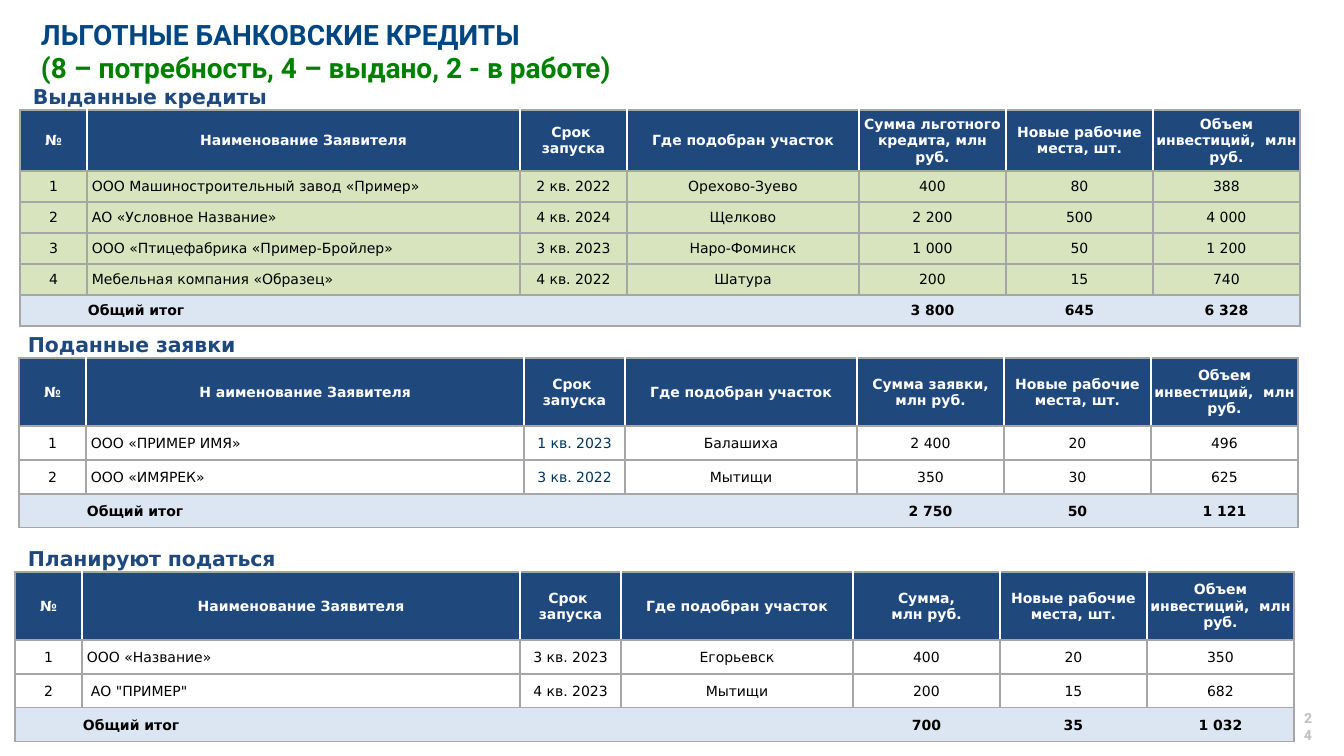
from dataclasses import dataclass

from lxml.etree import SubElement
from pptx import Presentation
from pptx.dml.color import RGBColor
from pptx.enum.text import MSO_ANCHOR, MSO_AUTO_SIZE, PP_ALIGN
from pptx.oxml.ns import qn
from pptx.util import Emu, Pt

SLIDE_WIDTH, SLIDE_HEIGHT = 1344, 756
EMU_PER_PX = 12192000 / SLIDE_WIDTH

COLORS = {
    "title": "004680", "subtitle": "008000", "navy": "1F497D", "term": "003560",
    "issued": "D7E4BD", "total": "DCE6F2", "border": "A6A6A6",
    "page": "BFBFBF", "white": "FFFFFF", "black": "000000",
}
TITLE_FONT, TABLE_FONT = "Roboto", "DejaVu Sans"
NAME_COLUMN, TERM_COLUMN = 1, 2
TOTAL_LABEL = "Общий итог"


@dataclass
class Style:
    size: float
    color: str
    font: str = TABLE_FONT
    bold: bool = True


@dataclass
class Applicant:
    name: str
    term: str
    place: str
    amount: str
    jobs: str
    investment: str
    indent: int = 5


@dataclass
class Section:
    heading: str
    heading_at: tuple[int, int]
    table_at: tuple[int, int]
    name_width: int
    term_width: int
    header_height: int
    row_height: int
    name_label: str
    amount_label: str
    applicants: list[Applicant]
    totals: list[str]
    body_fill: str | None = None
    term_color: str = "black"


SECTIONS = [
    Section("Выданные кредиты", (22, 79), (20, 110), 433, 107, 61, 31,
            "Наименование Заявителя", "Сумма льготного кредита, млн руб.",
            [Applicant("ООО Машиностроительный завод «Пример»", "2 кв. 2022",
                       "Орехово-Зуево", "400", "80", "388"),
             Applicant("АО «Условное Название»", "4 кв. 2024", "Щелково",
                       "2 200", "500", "4 000"),
             Applicant("ООО «Птицефабрика «Пример-Бройлер»", "3 кв. 2023",
                       "Наро-Фоминск", "1 000", "50", "1 200"),
             Applicant("Мебельная компания «Образец»", "4 кв. 2022", "Шатура",
                       "200", "15", "740")],
            ["3 800", "645", "6 328"], body_fill="issued"),
    Section("Поданные заявки", (17, 327), (19, 358), 438, 101, 68, 34,
            "Н аименование Заявителя", "Сумма заявки, млн руб.",
            [Applicant("ООО «ПРИМЕР ИМЯ»", "1 кв. 2023", "Балашиха", "2 400", "20", "496"),
             Applicant("ООО «ИМЯРЕК»", "3 кв. 2022", "Мытищи", "350", "30", "625")],
            ["2 750", "50", "1 121"], term_color="term"),
    Section("Планируют податься", (17, 541), (15, 572), 438, 101, 68, 34,
            "Наименование Заявителя", "Сумма,\nмлн руб.",
            [Applicant("ООО «Название»", "3 кв. 2023", "Егорьевск", "400", "20", "350"),
             Applicant('АО "ПРИМЕР"', "4 кв. 2023", "Мытищи", "200", "15", "682", indent=9)],
            ["700", "35", "1 032"]),
]


def px(length: int) -> Emu:
    return Emu(round(length * EMU_PER_PX))


def add_span(para, text: str, style: Style):
    span = para.add_run()
    span.text = text
    span.font.name = style.font
    span.font.size = Pt(style.size)
    span.font.bold = style.bold
    span.font.color.rgb = RGBColor.from_string(COLORS[style.color])
    return span


def set_insets(target, left: int, top: int, right: int, bottom: int) -> None:
    target.margin_left, target.margin_top = px(left), px(top)
    target.margin_right, target.margin_bottom = px(right), px(bottom)


def draw_borders(cell, left: str | None, right: str | None) -> None:
    """Set all four sides; None leaves that side without a line."""
    properties = cell._tc.get_or_add_tcPr()
    sides = {"lnL": left, "lnR": right, "lnT": "border", "lnB": "border"}
    for tag, color in sides.items():
        line = SubElement(properties, qn(f"a:{tag}"), w=str(Pt(1)))
        if color is None:
            SubElement(line, qn("a:noFill"))
        else:
            fill = SubElement(line, qn("a:solidFill"))
            SubElement(fill, qn("a:srgbClr"), val=COLORS[color])


def fill_cell(cell, text: str, style: Style, fill: str | None,
              align: PP_ALIGN = PP_ALIGN.CENTER, indent: int = 1) -> None:
    set_insets(cell, indent, 1, 1, 0)
    cell.vertical_anchor = MSO_ANCHOR.MIDDLE
    if fill is None:
        cell.fill.background()
    else:
        cell.fill.solid()
        cell.fill.fore_color.rgb = RGBColor.from_string(COLORS[fill])
    frame = cell.text_frame
    for index, line in enumerate(text.split("\n")):
        para = frame.add_paragraph() if index else frame.paragraphs[0]
        para.alignment = align
        if line:
            add_span(para, line, style)
        else:
            SubElement(para._p, qn("a:endParaRPr"), sz="1000")


def add_heading(slide, section: Section) -> None:
    left, top = section.heading_at
    box = slide.shapes.add_textbox(px(left), px(top), px(692), px(35))
    frame = box.text_frame
    frame.word_wrap = True
    set_insets(frame, 11, 5, 10, 5)
    span = add_span(frame.paragraphs[0], section.heading, Style(14.6, "navy"))
    span._r.get_or_add_rPr().set("spc", "-10")


def add_section_table(slide, section: Section) -> None:
    widths = [67, section.name_width, section.term_width, 232, 147, 147, 147]
    heights = [section.header_height] + [section.row_height] * (len(section.applicants) + 1)
    left, top = section.table_at
    table = slide.shapes.add_table(len(heights), len(widths), px(left), px(top),
                                   px(sum(widths)), px(sum(heights))).table
    table.first_row = table.horz_banding = False
    for column, width in zip(table.columns, widths):
        column.width = px(width)
    for row, height in zip(table.rows, heights):
        row.height = px(height)

    last = len(widths) - 1
    inner_borders = ["white"] + ["border"] * len(section.applicants) + [None]
    for row, inner in zip(table.rows, inner_borders):
        for index, cell in enumerate(row.cells):
            draw_borders(cell, inner if index else "border",
                         inner if index < last else "border")

    labels = ["№", section.name_label, "Срок \nзапуска", "Где подобран участок",
              section.amount_label, "Новые рабочие места, шт.",
              "Объем инвестиций,  млн руб."]
    for index, label in enumerate(labels):
        fill_cell(table.cell(0, index), label, Style(10, "white"), "navy")

    for number, applicant in enumerate(section.applicants, start=1):
        values = [str(number), applicant.name, applicant.term, applicant.place,
                  applicant.amount, applicant.jobs, applicant.investment]
        for index, value in enumerate(values):
            is_name = index == NAME_COLUMN
            color = section.term_color if index == TERM_COLUMN else "black"
            fill_cell(table.cell(number, index), value, Style(10, color, bold=False),
                      section.body_fill, PP_ALIGN.LEFT if is_name else PP_ALIGN.CENTER,
                      applicant.indent if is_name else 1)

    for index, value in enumerate(["", TOTAL_LABEL, "", "", *section.totals]):
        align = PP_ALIGN.LEFT if index == NAME_COLUMN else PP_ALIGN.CENTER
        fill_cell(table.cell(len(heights) - 1, index), value, Style(10, "black"),
                  "total", align)


def add_title(slide) -> None:
    title = slide.shapes.title
    title.left, title.top, title.width, title.height = px(41), px(17), px(1227), px(67)
    frame = title.text_frame
    frame.auto_size = MSO_AUTO_SIZE.NONE
    frame.vertical_anchor = MSO_ANCHOR.TOP
    frame.word_wrap = True
    set_insets(frame, 0, 0, 0, 0)
    lines = [("ЛЬГОТНЫЕ БАНКОВСКИЕ КРЕДИТЫ", "title"),
             ("(8 – потребность, 4 – выдано, 2 - в работе)", "subtitle")]
    for index, (text, color) in enumerate(lines):
        para = frame.add_paragraph() if index else frame.paragraphs[0]
        para.alignment = PP_ALIGN.LEFT
        add_span(para, text, Style(20, color, TITLE_FONT))


def add_page_number(slide) -> None:
    box = slide.shapes.add_textbox(px(1299), px(713), px(18), px(27))
    frame = box.text_frame
    frame.word_wrap = True
    frame.vertical_anchor = MSO_ANCHOR.MIDDLE
    set_insets(frame, 5, 5, 5, 5)
    para = frame.paragraphs[0]
    para.alignment = PP_ALIGN.RIGHT
    add_span(para, "24", Style(10, "page", TITLE_FONT))


def main() -> None:
    deck = Presentation()
    deck.slide_width, deck.slide_height = px(SLIDE_WIDTH), px(SLIDE_HEIGHT)
    slide = deck.slides.add_slide(deck.slide_layouts.get_by_name("Title Only"))
    add_page_number(slide)
    add_title(slide)
    for section in SECTIONS:
        add_section_table(slide, section)
        add_heading(slide, section)
    deck.save("out.pptx")


if __name__ == "__main__":
    main()
